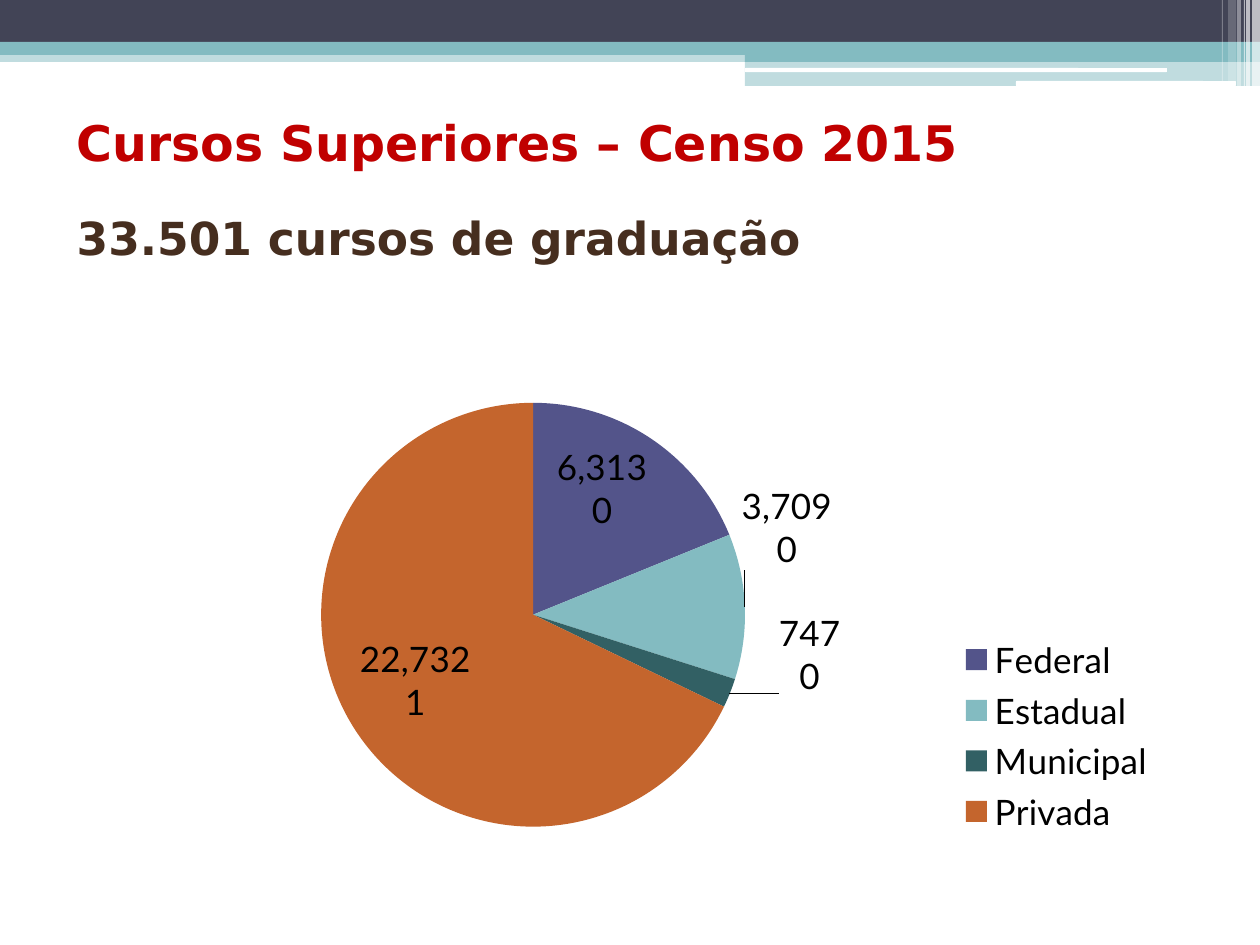
from lxml import etree
from pptx import Presentation
from pptx.chart.data import CategoryChartData as Data
from pptx.dml.color import RGBColor
from pptx.enum.chart import XL_CHART_TYPE as Kind, XL_LABEL_POSITION as Pos, XL_LEGEND_POSITION as Side
from pptx.enum.shapes import MSO_SHAPE as Shape
from pptx.enum.text import MSO_ANCHOR as Anchor, PP_ALIGN as Align
from pptx.oxml.ns import qn
from pptx.util import Pt

PX = 914400 / 126
TEAL, WHITE = "83BBC1", "FFFFFF"
FORMAT = "#,##0"


def color(code):
    return RGBColor.from_string(code)


def place(node, index, mode, **spots):
    for old in node.findall(qn("c:layout")):
        node.remove(old)
    layout = etree.Element(qn("c:layout"))
    manual = etree.SubElement(layout, qn("c:manualLayout"))
    if mode == "inner":
        etree.SubElement(manual, qn("c:layoutTarget"), val="inner")
    if mode != "offset":
        for name in ("xMode", "yMode"):
            etree.SubElement(manual, qn("c:" + name), val="edge")
    for name, value in spots.items():
        etree.SubElement(manual, qn("c:" + name), val=str(value))
    node.insert(index, layout)


deck = Presentation()
deck.slide_width, deck.slide_height = int(1260 * PX), int(945 * PX)
slide = deck.slides.add_slide(deck.slide_layouts[1])

bars = [
    (0, 50, 1260, 12, TEAL, 50),
    (0, 0, 1260, 43, "424456", 100),
    (0, 42, 1260, 13, TEAL, 100),
    (745, 49, 515, 13, TEAL, 100),
    (745, 61, 515, 25, TEAL, 50),
    (745, 68, 422, 4, WHITE, 100),
    (1016, 81, 220, 5, WHITE, 100),
    (1252, 0, 8, 86, WHITE, 65),
    (1246, 0, 4, 86, WHITE, 65),
    (1244, 0, 1, 86, WHITE, 60),
    (1237, 0, 4, 86, WHITE, 40),
    (1228, 0, 8, 81, WHITE, 20),
    (1222, 0, 1, 81, WHITE, 30),
]
for x, y, wide, high, tone, alpha in bars:
    solid = tone == WHITE and wide > 100
    form = Shape.ROUNDED_RECTANGLE if solid else Shape.RECTANGLE
    bar = slide.shapes.add_shape(form, *(int(n * PX) for n in (x, y, wide, high)))
    bar.shadow.inherit = False
    bar.line.fill.background()
    bar.fill.solid()
    bar.fill.fore_color.rgb = color(tone)
    if alpha < 100:
        fill = bar.fill._xPr.find(".//" + qn("a:srgbClr"))
        etree.SubElement(fill, qn("a:alpha"), val=str(alpha * 1000))

lines = [
    (slide.shapes.title, 106, 1134, "Cursos Superiores – Censo 2015", 28, "C00000", 0),
    (slide.placeholders[1], 204, 1131, "33.501 cursos de graduação", 26, "462E1F", 3),
]
for box, y, wide, text, size, tone, gap in lines:
    box.left, box.top, box.width, box.height = (int(n * PX) for n in (64, y, wide, 89))
    frame = box.text_frame
    frame.text = text
    frame.vertical_anchor = Anchor.TOP
    para = frame.paragraphs[0]
    para.alignment = Align.LEFT
    para.space_before = Pt(gap)
    para.font.name = "DejaVu Sans"
    para.font.size = Pt(size)
    para.font.bold = True
    para.font.color.rgb = color(tone)
    props = para._p.get_or_add_pPr()
    props.set("marL", "0")
    props.set("indent", "0")
    mark = etree.Element(qn("a:buNone"))
    props.find(qn("a:spcBef")).addnext(mark)

data = Data(number_format=FORMAT)
data.categories = ["Federal", "Estadual", "Municipal", "Privada"]
data.add_series("Series 1", (6313, 3709, 747, 22732))
area = (int(n * PX) for n in (115, 314, 1052, 566))
chart = slide.shapes.add_chart(Kind.PIE, *area, data).chart
chart.has_title = False
chart.font.name = "Lato"
chart.font.size = Pt(20)
chart.font.color.rgb = color("000000")
chart.has_legend = True
chart.legend.position = Side.RIGHT
chart.legend.include_in_layout = False
place(chart.legend._element, 1, "edge", x=0.8, y=0.56, w=0.19, h=0.37)
plot = chart.plots[0]
plot.vary_by_categories = True
place(chart._chartSpace.find(".//" + qn("c:plotArea")), 0, "inner", x=0.196, y=0.157, w=0.403, h=0.749)

pie = plot.series[0]
for i, tone in enumerate(("53548A", TEAL, "326064", "C4652D")):
    fill = pie.points[i].format.fill
    fill.solid()
    fill.fore_color.rgb = color(tone)

tags = pie.data_labels
tags.show_value = tags.show_percentage = True
tags.number_format = FORMAT
tags.number_format_is_linked = False
tags.position = Pos.INSIDE_END
for i, x, y in ((1, -0.01, -0.14), (2, 0.04, -0.15)):
    tag = pie.points[i].data_label
    tag.font.name = "Lato"
    tag.font.size = Pt(20)
    tag.font.color.rgb = color("000000")
    tag.position = Pos.OUTSIDE_END
    node = pie._element.findall(".//" + qn("c:dLbl"))[-1]
    place(node, 1, "offset", x=x, y=y)
    node.insert(2, etree.Element(qn("c:numFmt"), formatCode=FORMAT, sourceLinked="0"))
    node.find(qn("c:showPercent")).set("val", "1")
for node in pie._element.findall(".//" + qn("c:showBubbleSize")):
    split = etree.Element(qn("c:separator"))
    split.text = "\n"
    node.addnext(split)

deck.save("out.pptx")
